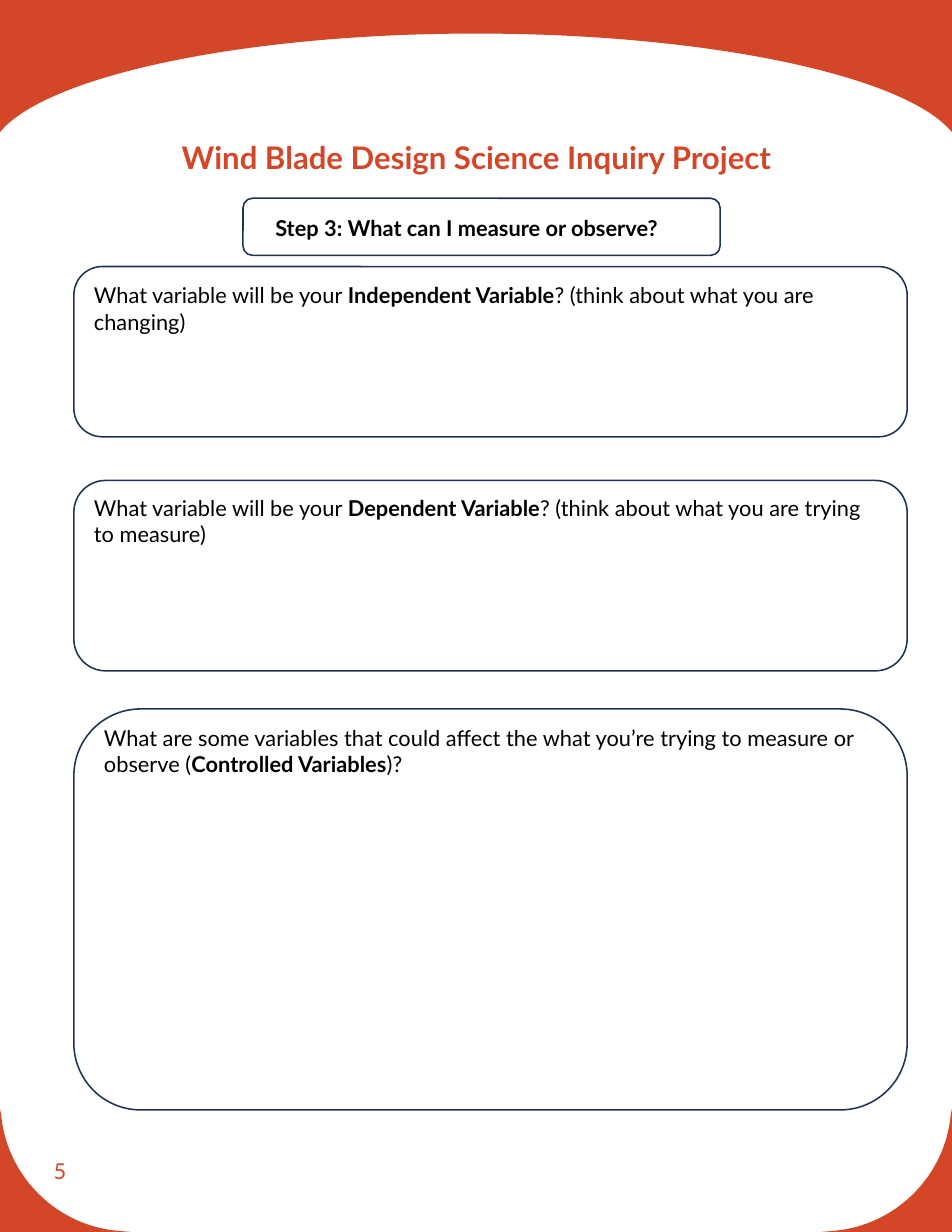
from dataclasses import dataclass

from lxml import etree
from pptx import Presentation
from pptx.dml.color import RGBColor
from pptx.enum.shapes import MSO_SHAPE
from pptx.enum.text import MSO_ANCHOR, PP_ALIGN
from pptx.oxml.ns import qn
from pptx.util import Inches, Pt

WIDTH, HEIGHT = 8.5, 11


@dataclass(frozen=True)
class Theme:
    accent = RGBColor(0xD3, 0x47, 0x28)
    outline = RGBColor(0x1E, 0x32, 0x56)
    ink = RGBColor(0, 0, 0)
    paper = RGBColor(0xFF, 0xFF, 0xFF)
    font = "Lato"
    title_size = Pt(20)
    body_size = Pt(14)
    line_width = Pt(1)


THEME = Theme()


def mirror(segments):
    return [[(WIDTH - x, y) for x, y in segment] for segment in segments]


def add_band(shapes, segments):
    """Segments of one point are straight; those of three are cubic curves."""
    points = [tuple(map(Inches, point)) for segment in segments for point in segment]
    builder = shapes.build_freeform(*points[0])
    builder.add_line_segments(points[1:], close=True)
    band = builder.convert_to_shape()
    band.shadow.inherit = False
    band.fill.solid()
    band.fill.fore_color.rgb = THEME.accent
    band.line.fill.background()

    steps = iter(list(band._element.iter(qn("a:lnTo"))))
    for segment in segments[1:]:
        legs = [next(steps) for _ in segment]
        if len(legs) == 3:
            curve = etree.Element(qn("a:cubicBezTo"))
            legs[0].addprevious(curve)
            for leg in legs:
                curve.append(leg[0])
                leg.getparent().remove(leg)


def add_page_frame(shapes):
    add_band(shapes, [
        [(0, 0)], [(WIDTH, 0)], [(WIDTH, 1.18)],
        [(8.09, 0.68), (6.34, 0.3), (4.25, 0.3)],
        [(2.16, 0.3), (0.41, 0.68), (0, 1.18)]])

    corner = [[(0, 9.9)], [(0.01, 9.95)],
              [(0.06, 10.5), (0.5, 10.94), (1.05, 10.99)],
              [(1.17, HEIGHT)], [(0, HEIGHT)]]
    add_band(shapes, corner)
    add_band(shapes, mirror(corner))


def add_text(shapes, place, *paragraphs, size=THEME.body_size, color=THEME.ink,
             align=PP_ALIGN.LEFT, anchor=MSO_ANCHOR.TOP, spacing=None):
    """Each paragraph is a list of (wording, bold) runs."""
    frame = shapes.add_textbox(*map(Inches, place)).text_frame
    frame.word_wrap = True
    frame.vertical_anchor = anchor
    for index, runs in enumerate(paragraphs):
        paragraph = frame.paragraphs[0] if index == 0 else frame.add_paragraph()
        paragraph.alignment = align
        if spacing:
            paragraph.line_spacing = spacing
        for wording, bold in runs:
            run = paragraph.add_run()
            run.text = wording
            run.font.name = THEME.font
            run.font.size = size
            run.font.bold = bold
            run.font.color.rgb = color


def add_answer_box(shapes, box_place, text_place, *paragraphs, filled=False):
    """A rounded outline grouped with its prompt."""
    members = shapes.add_group_shape().shapes
    box = members.add_shape(MSO_SHAPE.ROUNDED_RECTANGLE, *map(Inches, box_place))
    box.shadow.inherit = False
    if filled:
        box.fill.solid()
        box.fill.fore_color.rgb = THEME.paper
    else:
        box.fill.background()
    box.line.color.rgb = THEME.outline
    box.line.width = THEME.line_width
    add_text(members, text_place, *paragraphs)


def main():
    deck = Presentation()
    deck.slide_width, deck.slide_height = Inches(WIDTH), Inches(HEIGHT)
    shapes = deck.slides.add_slide(deck.slide_layouts[6]).shapes

    add_page_frame(shapes)
    add_text(shapes, (0.38, 10.16, 1.91, 0.59), [("5", False)],
             color=THEME.accent, anchor=MSO_ANCHOR.MIDDLE)
    add_text(shapes, (0.36, 1.09, 7.79, 0.86),
             [("Wind Blade Design Science Inquiry Project", True)],
             size=THEME.title_size, color=THEME.accent,
             align=PP_ALIGN.CENTER, spacing=1.3)

    box_left, box_width = 0.66, 7.44
    add_answer_box(
        shapes, (box_left, 6.33, box_width, 3.58), (0.83, 6.42, 7.26, 0.57),
        [("What are some variables that could affect the what you’re trying "
          "to measure or observe (", False),
         ("Controlled Variables", True), (")?", False)])
    add_answer_box(
        shapes, (2.17, 1.77, 4.26, 0.51), (2.36, 1.87, 4.13, 0.34),
        [("Step 3: What can I measure or observe?", True)])
    add_answer_box(
        shapes, (box_left, 4.29, box_width, 1.7), (0.74, 4.37, 7.26, 0.57),
        [("What variable will be your ", False), ("Dependent Variable", True),
         ("? (think about what you are trying to measure)", False)],
        filled=True)
    add_answer_box(
        shapes, (box_left, 2.38, box_width, 1.52), (0.74, 2.47, 7.4, 0.57),
        [("What variable will be your ", False), ("Independent Variable", True),
         ("? (think about what you are", False)],
        [("changing)", False)])

    deck.save("out.pptx")


if __name__ == "__main__":
    main()
